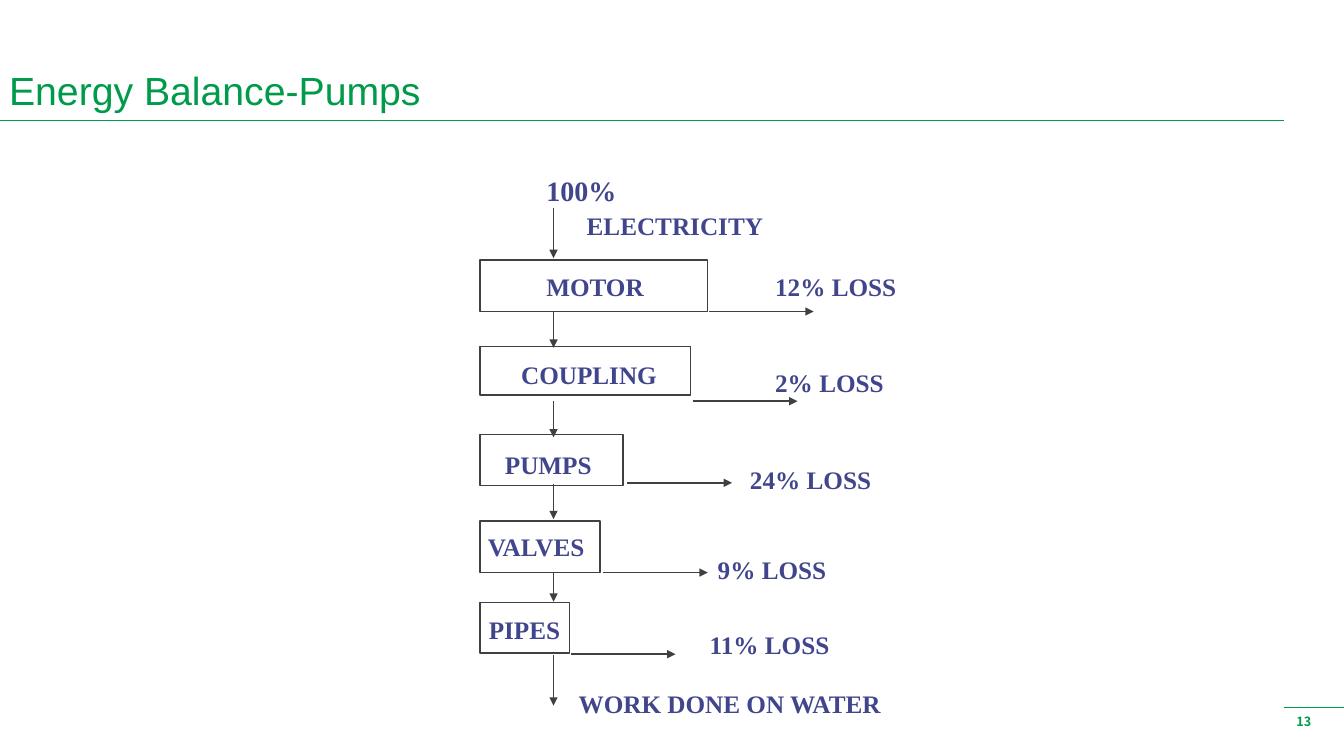
from lxml import etree
from pptx import Presentation
from pptx.dml.color import RGBColor
from pptx.enum.shapes import MSO_CONNECTOR as CONN, MSO_SHAPE as SHAPE
from pptx.enum.text import MSO_ANCHOR as ANCHOR, MSO_AUTO_SIZE as AUTO, PP_ALIGN as ALIGN
from pptx.oxml.ns import qn
from pptx.util import Pt

COLORS = {"green": "009B4A", "ink": "3F4040", "label": "40458C"}
PX = 9144  # 100 px to the inch

BOX_LEFT, FLOW_X, LOSS_LEN = 476, 549, 104
# name, box (top, width, height), name at (left, top, width),
# loss, loss at (left, top), loss arrow start (x, y)
STAGES = [
    ("MOTOR", (258, 226, 51), (532, 264, 126), "12% LOSS", (759, 264), (703, 309)),
    ("COUPLING", (344, 209, 48), (507, 352, 159), "2% LOSS", (759, 359), (687, 398)),
    ("PUMPS", (431, 142, 51), (491, 441, 134), "24% LOSS", (734, 456), (622, 479)),
    ("VALVES", (517, 119, 51), (474, 522, 134), "9% LOSS", (702, 545), (598, 568)),
    ("PIPES", (598, 89, 50), (475, 604, 134), "11% LOSS", (694, 619), (566, 649)),
]
FLOW_ARROWS = [(206, 256), (310, 345), (398, 434), (480, 515), (568, 597), (650, 700)]


def rgb(name):
    return RGBColor.from_string(COLORS[name])


class Slide:
    def __init__(self, s, font="Times New Roman", color="label"):
        self.s, self.font, self.color = s, font, color

    def style(self, p, size, font=None, color=None, bold=True):
        f = p.font
        f.size, f.bold, f.name = Pt(size), bold, font or self.font
        f.color.rgb = rgb(color or self.color)

    def title(self, text, x, y, w, h):
        sp = self.s.shapes.title
        sp.left, sp.top, sp.width, sp.height = (v * PX for v in (x, y, w, h))
        tf = sp.text_frame
        tf.text = text
        tf.auto_size, tf.vertical_anchor = AUTO.NONE, ANCHOR.BOTTOM
        p = tf.paragraphs[0]
        p.alignment, p.line_spacing = ALIGN.LEFT, 0.85
        self.style(p, 28, "Arial", "green", False)

    def text(self, text, x, y, w, h=41, size=18, font=None, color=None):
        tf = self.s.shapes.add_textbox(x * PX, y * PX, w * PX, h * PX).text_frame
        tf.word_wrap = True
        p = tf.paragraphs[0]
        p.text = text
        self.style(p, size, font, color)

    def box(self, x, y, w, h):
        sp = self.s.shapes.add_shape(SHAPE.RECTANGLE, x * PX, y * PX, w * PX, h * PX)
        sp.shadow.inherit = False
        sp.fill.background()
        sp.line.color.rgb, sp.line.width = rgb("ink"), Pt(1)

    def line(self, x1, y1, x2, y2, color="ink", width=1.0, arrow=False):
        c = self.s.shapes.add_connector(CONN.STRAIGHT, x1 * PX, y1 * PX, x2 * PX, y2 * PX)
        c.line.color.rgb, c.line.width = rgb(color), Pt(width)
        if arrow:
            etree.SubElement(c.line._get_or_add_ln(), qn("a:tailEnd"), type="triangle")
        etree.SubElement(c._element.spPr, qn("a:effectLst"))


def main():
    prs = Presentation()
    prs.slide_width, prs.slide_height = 1333 * PX, 750 * PX
    s = Slide(prs.slides.add_slide(prs.slide_layouts[5]))

    s.line(0, 120, 1274, 120, "green", 0.75)
    s.text("13", 1276, 703, 80, 50, 9, "Noto Sans CJK JP", "green")
    s.line(1333, 702, 1274, 702, "green")
    s.title("Energy Balance-Pumps", -1, 14, 1219, 104)

    for _, (top, w, h), *_ in STAGES:
        s.box(BOX_LEFT, top, w, h)
    for y1, y2 in FLOW_ARROWS:
        s.line(FLOW_X, y1, FLOW_X, y2, arrow=True)

    s.text("ELECTRICITY", 572, 204, 218)
    s.text("100%", 532, 167, 126, 44, 20)
    for name, _, name_at, loss, loss_at, (x, y) in STAGES:
        s.line(x, y, x + LOSS_LEN, y, arrow=True)
        s.text(loss, *loss_at, 176)
        s.text(name, *name_at)
    s.text("WORK DONE ON WATER", 564, 678, 359)

    prs.save("out.pptx")


if __name__ == "__main__":
    main()
